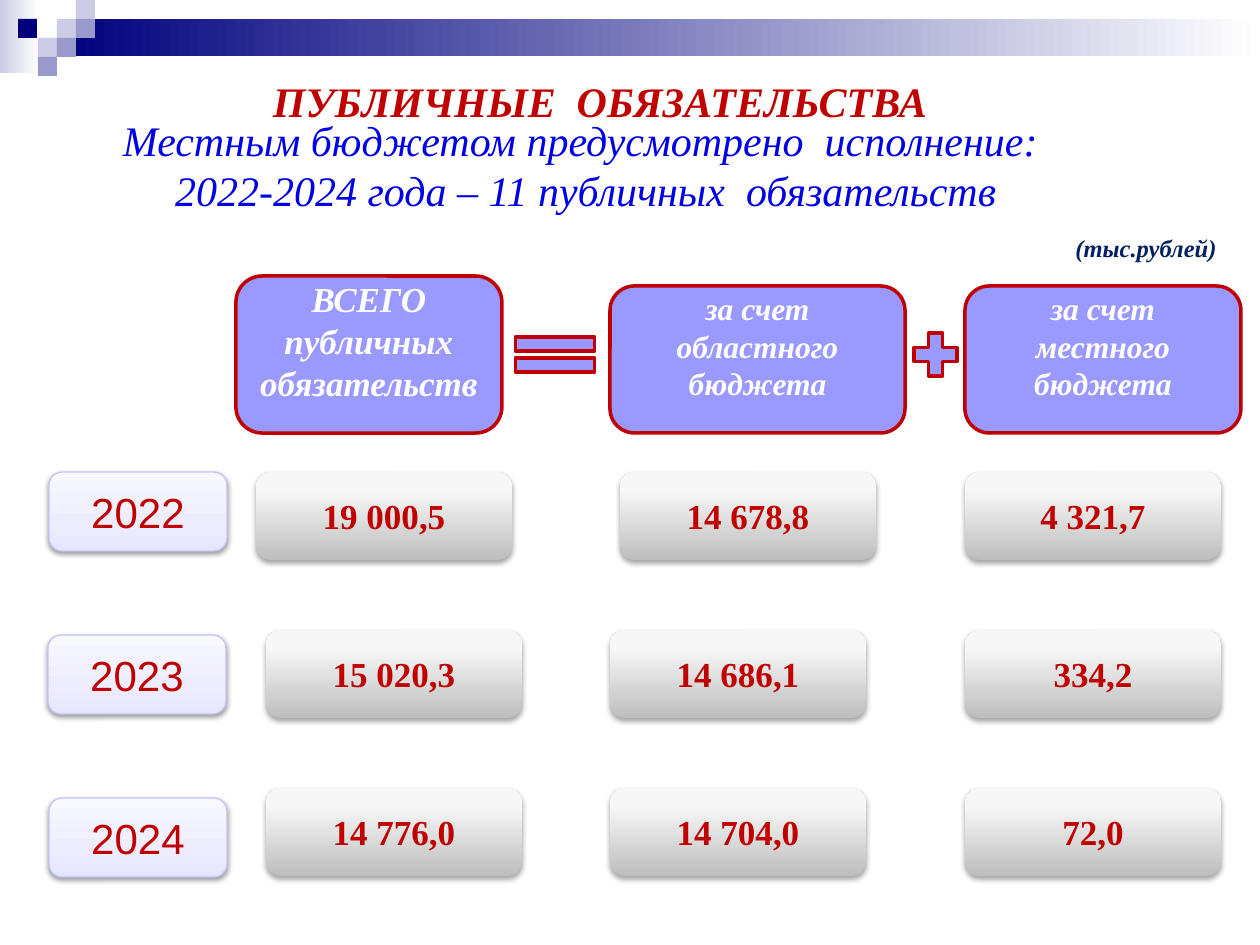
import dataclasses

import pptx
import pptx.dml.color
import pptx.enum.shapes
import pptx.enum.text
import pptx.oxml
import pptx.oxml.ns
import pptx.util

SCALE = 914400 / 126
KIND = pptx.enum.shapes.MSO_SHAPE
ALIGN = pptx.enum.text.PP_ALIGN
ANCHOR = pptx.enum.text.MSO_ANCHOR
FIT = pptx.enum.text.MSO_AUTO_SIZE


@dataclasses.dataclass(frozen=True)
class Font:
    """Look of a run of text."""
    size: int
    color: str
    bold: bool = False
    italic: bool = False
    name: str = "Times New Roman"


@dataclasses.dataclass(frozen=True)
class Theme:
    """Colours and type of the slide."""
    navy: str = "00007D"
    pale: str = "CCCCE6"
    mid: str = "9999CC"
    head: str = "9999FF"
    red: str = "C00000"
    edge: str = "C4C4FB"
    fade: tuple = ((0, "CCCCE6"), (100, "FFFFFF"))
    band: tuple = ((0, "00007D"), (100, "FFFFFF"))
    gray: tuple = ((0, "BEBEBE"), (80, "F7F7F7"), (100, "F8F8F8"))
    lilac: tuple = ((0, "E6E6FF"), (35, "EDEDFF"), (100, "F8F8FF"))
    title: Font = Font(24, "C00000", True, True)
    intro: Font = Font(24, "0000E4", False, True)
    unit: Font = Font(14, "002060", True, True)
    total: Font = Font(20, "FFFFFF", True, True)
    share: Font = Font(18, "FFFFFF", True, True)
    value: Font = Font(20, "C00000", True)
    year: Font = Font(24, "C00000", name="Arial")


THEME = Theme()


def px(num):
    """Turn pixels into EMU."""
    return pptx.util.Emu(round(num * SCALE))


def rgb(code):
    """Turn a hex code into a colour."""
    return pptx.dml.color.RGBColor.from_string(code)


def write(frame, lines, font, align=ALIGN.CENTER):
    """Write one paragraph for each line."""
    for num, line in enumerate(lines):
        para = frame.add_paragraph() if num else frame.paragraphs[0]
        para.alignment = align
        run = para.add_run()
        run.text = line
        run.font.name = font.name
        run.font.size = pptx.util.Pt(font.size)
        run.font.bold = font.bold
        run.font.italic = font.italic
        run.font.color.rgb = rgb(font.color)


def blend(shape, stops, angle):
    """Fill a shape with a linear gradient."""
    shape.fill.gradient()
    shape.fill.gradient_angle = angle
    items = shape._element.spPr.find(".//" + pptx.oxml.ns.qn("a:gsLst"))
    for item in list(items):
        items.remove(item)
    for spot, color in stops:
        items.append(pptx.oxml.parse_xml(
            f'<a:gs {pptx.oxml.ns.nsdecls("a")} pos="{spot * 1000}">'
            f'<a:srgbClr val="{color}"/></a:gs>'))


def shade(shape, alpha, blur, dist):
    """Drop a soft black shadow below a shape."""
    effect = shape._element.spPr.find(pptx.oxml.ns.qn("a:effectLst"))
    effect.append(pptx.oxml.parse_xml(
        f'<a:outerShdw {pptx.oxml.ns.nsdecls("a")} '
        f'blurRad="{pptx.util.Pt(blur)}" dist="{pptx.util.Pt(dist)}" '
        f'dir="5400000" rotWithShape="0"><a:srgbClr val="000000">'
        f'<a:alpha val="{alpha * 1000}"/></a:srgbClr></a:outerShdw>'))


def draw(slide, kind, box, fill, line=None, width=2, angle=0):
    """Add a shape with a plain or gradient fill."""
    shape = slide.shapes.add_shape(kind, *map(px, box))
    shape.shadow.inherit = False
    if isinstance(fill, str):
        shape.fill.solid()
        shape.fill.fore_color.rgb = rgb(fill)
    else:
        blend(shape, fill, angle)
    if line:
        shape.line.color.rgb = rgb(line)
        shape.line.width = pptx.util.Pt(width)
    else:
        shape.line.fill.background()
    return shape


def label(slide, box, lines, font, wrap=True, align=ALIGN.CENTER):
    """Add a text box."""
    frame = slide.shapes.add_textbox(*map(px, box)).text_frame
    frame.word_wrap = wrap
    frame.auto_size = FIT.SHAPE_TO_FIT_TEXT
    write(frame, lines, font, align)


def fill_in(shape, lines, font):
    """Write centred text inside a shape."""
    frame = shape.text_frame
    frame.word_wrap = True
    frame.vertical_anchor = ANCHOR.MIDDLE
    write(frame, lines, font)


def head(slide, box, lines, font):
    """Add a column heading, lifted off its lower edge."""
    shape = draw(slide, KIND.ROUNDED_RECTANGLE, box, THEME.head, THEME.red)
    shape.text_frame.margin_bottom = px(34)
    fill_in(shape, lines, font)


def card(slide, left, top, text):
    """Add a gray card with a sum."""
    shape = draw(slide, KIND.ROUNDED_RECTANGLE, (left, top, 256, 88),
                 THEME.gray, angle=90)
    shade(shape, 35, 3.1, 1.8)
    fill_in(shape, [text], THEME.value)


def badge(slide, left, top, text):
    """Add a lilac badge with a year."""
    shape = draw(slide, KIND.ROUNDED_RECTANGLE, (left, top, 178, 79),
                 THEME.lilac, THEME.edge, 0.75, 90)
    shade(shape, 38, 3.1, 1.6)
    fill_in(shape, [text], THEME.year)


def banner(slide):
    """Add the band and the squares at the top."""
    draw(slide, KIND.RECTANGLE, (0, 0, 39, 73), THEME.fade)
    draw(slide, KIND.RECTANGLE, (57, 19, 1203, 37), THEME.band)
    for left, top, color in (
            (57, 19, THEME.pale), (76, 0, THEME.pale), (76, 19, THEME.mid),
            (38, 38, THEME.pale), (18, 19, THEME.navy),
            (57, 38, THEME.mid), (38, 57, THEME.mid)):
        draw(slide, KIND.RECTANGLE, (left, top, 19, 19), color)


def main():
    """Build the slide and save it."""
    deck = pptx.Presentation()
    deck.slide_width, deck.slide_height = px(1260), px(945)
    slide = deck.slides.add_slide(deck.slide_layouts[6])
    banner(slide)
    label(slide, (108, 69, 984, 63), ["ПУБЛИЧНЫЕ  ОБЯЗАТЕЛЬСТВА"], THEME.title)
    label(slide, (20, 108, 1131, 115),
          ["Местным бюджетом предусмотрено  исполнение: ",
           "2022-2024 года – 11 публичных  обязательств"], THEME.intro)
    label(slide, (1063, 227, 168, 43), ["(тыс.рублей)"], THEME.unit,
          False, ALIGN.LEFT)
    head(slide, (236, 276, 266, 157),
         ["ВСЕГО", "публичных", "обязательств"], THEME.total)
    head(slide, (610, 286, 295, 147),
         ["за счет областного бюджета"], THEME.share)
    head(slide, (965, 286, 276, 147),
         ["за счет местного", "бюджета"], THEME.share)
    draw(slide, KIND.MATH_EQUAL, (501, 325, 108, 59), THEME.head, THEME.red)
    draw(slide, KIND.MATH_PLUS, (906, 325, 59, 59), THEME.head, THEME.red)
    rows = (
        ("2022", 49, (256, 620, 965), ("19 000,5", "14 678,8", "4 321,7")),
        ("2023", 48, (266, 610, 965), ("15 020,3", "14 686,1", "334,2")),
        ("2024", 49, (266, 610, 965), ("14 776,0", "14 704,0", "72,0")))
    for num, (year, start, lefts, sums) in enumerate(rows):
        badge(slide, start, 472 + 163 * num, year)
        for left, text in zip(lefts, sums):
            card(slide, left, 472 + 158 * num, text)
    deck.save("out.pptx")


if __name__ == "__main__":
    main()
